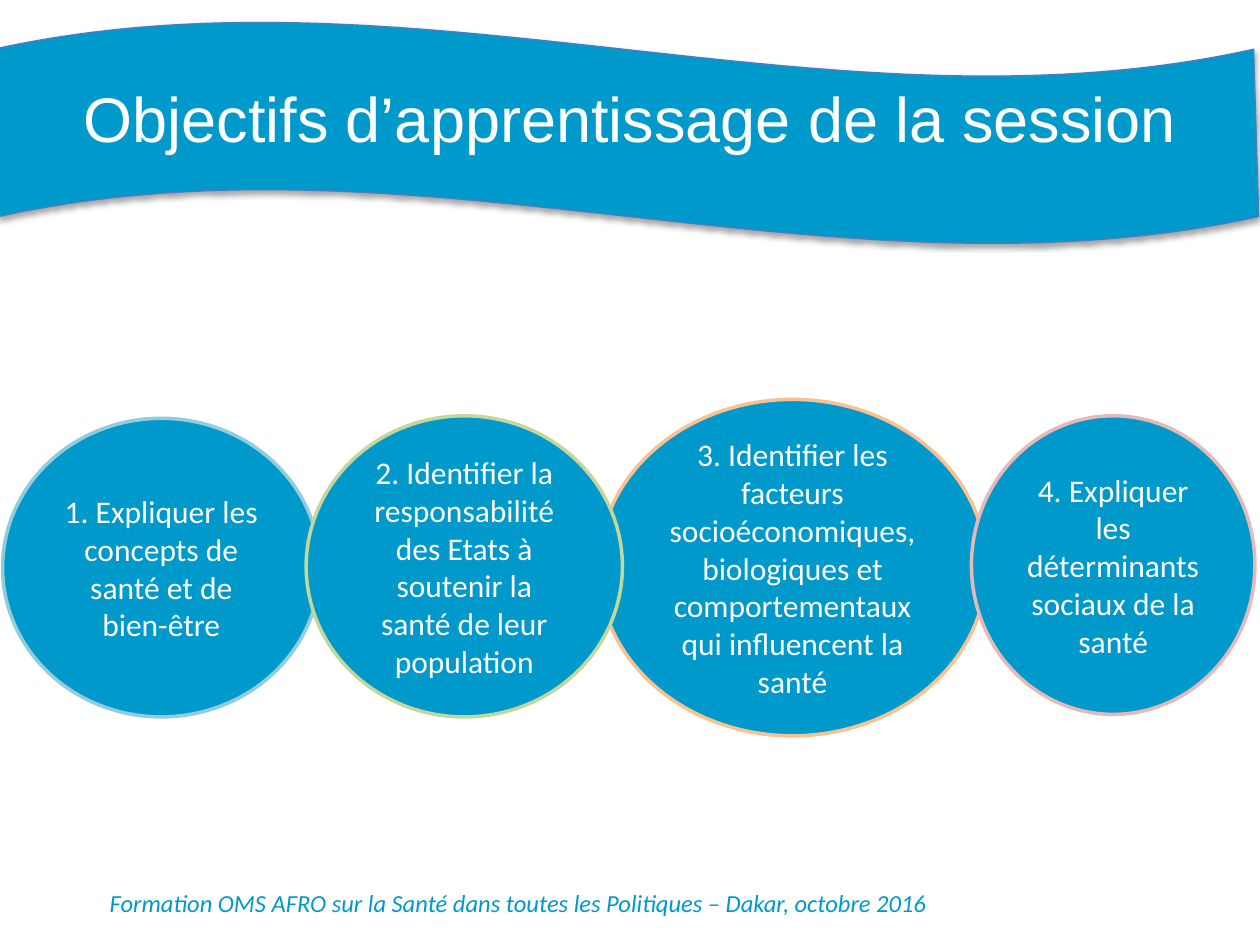
import pptx
import pptx.util
import pptx.dml.color
import pptx.enum.shapes
import pptx.enum.text
import pptx.oxml
import pptx.oxml.ns

Inches = pptx.util.Inches
SHAPES = pptx.enum.shapes.MSO_SHAPE

# Content
TITLE = "Objectifs d’apprentissage de la session"
FOOTER = "Formation OMS AFRO sur la Santé dans toutes les Politiques – Dakar, octobre 2016"
COLORS = {
    "blue": "0099CC", "white": "FFFFFF", "banner edge": "4B7EBC",
    "aqua": "93CDDD", "green": "C3D69B", "orange": "FAC090", "pink": "E6B9B8",
}
# Back to front: text, outline colour, (left, top, width, height)
OBJECTIVES = [
    ("1. Expliquer les concepts de santé et de bien-être",
     "aqua", (0.02, 3.32, 2.52, 2.37)),
    ("3. Identifier les facteurs socioéconomiques, biologiques et "
     "comportementaux qui influencent la santé",
     "orange", (4.75, 3.17, 3.08, 2.67)),
    ("2. Identifier la responsabilité des Etats à soutenir la santé de leur population",
     "green", (2.43, 3.3, 2.51, 2.39)),
    ("4. Expliquer les déterminants sociaux de la santé",
     "pink", (7.71, 3.3, 2.25, 2.37)),
]
TITLE_FONT = {"name": "Arial", "size": pptx.util.Pt(36)}
FOOTER_FONT = {"name": "Calibri", "size": pptx.util.Pt(14), "italic": True}
OBJECTIVE_FONT = {"name": "Calibri", "size": pptx.util.Pt(18)}


def rgb(color):
    return pptx.dml.color.RGBColor.from_string(COLORS[color])


def write(frame, text, font, color):
    frame.word_wrap = True
    paragraph = frame.paragraphs[0]
    paragraph.alignment = pptx.enum.text.PP_ALIGN.CENTER
    run = paragraph.add_run()
    run.text = text
    for key, value in font.items():
        setattr(run.font, key, value)
    run.font.color.rgb = rgb(color)


def add_blue_shape(slide, preset, box, outline, width):
    shape = slide.shapes.add_shape(preset, *map(Inches, box))
    shape.shadow.inherit = False
    shape.fill.solid()
    shape.fill.fore_color.rgb = rgb("blue")
    shape.line.color.rgb = rgb(outline)
    shape.line.width = pptx.util.Pt(width)
    return shape


def add_soft_shadow(shape):
    effects = shape.fill._xPr.find(pptx.oxml.ns.qn("a:effectLst"))
    effects.append(pptx.oxml.parse_xml(
        f'<a:outerShdw {pptx.oxml.ns.nsdecls("a")} blurRad="{pptx.util.Pt(3.1)}" '
        f'dist="{pptx.util.Pt(1.8)}" dir="5400000" rotWithShape="0">'
        '<a:srgbClr val="000000"><a:alpha val="35000"/></a:srgbClr></a:outerShdw>'))


def main():
    deck = pptx.Presentation()
    deck.slide_width, deck.slide_height = Inches(10), Inches(7.5)
    slide = deck.slides.add_slide(deck.slide_layouts[6])

    # Footer
    footer = slide.shapes.add_textbox(*map(Inches, (0.08, 7, 8.07, 0.34)))
    write(footer.text_frame, FOOTER, FOOTER_FONT, "blue")

    # Wavy banner and title
    banner = add_blue_shape(slide, SHAPES.WAVE, (-0.05, 0.17, 10.04, 1.77),
                            "banner edge", 0.75)
    banner.adjustments[0] = 0.125
    banner.adjustments[1] = 0.002
    add_soft_shadow(banner)
    title = slide.shapes.add_textbox(*map(Inches, (0, 0.58, 10, 0.71)))
    write(title.text_frame, TITLE, TITLE_FONT, "white")

    # Overlapping objectives
    for text, outline, box in OBJECTIVES:
        objective = add_blue_shape(slide, SHAPES.OVAL, box, outline, 2)
        objective.text_frame.vertical_anchor = pptx.enum.text.MSO_ANCHOR.MIDDLE
        write(objective.text_frame, text, OBJECTIVE_FONT, "white")

    deck.save("out.pptx")


if __name__ == "__main__":
    main()
